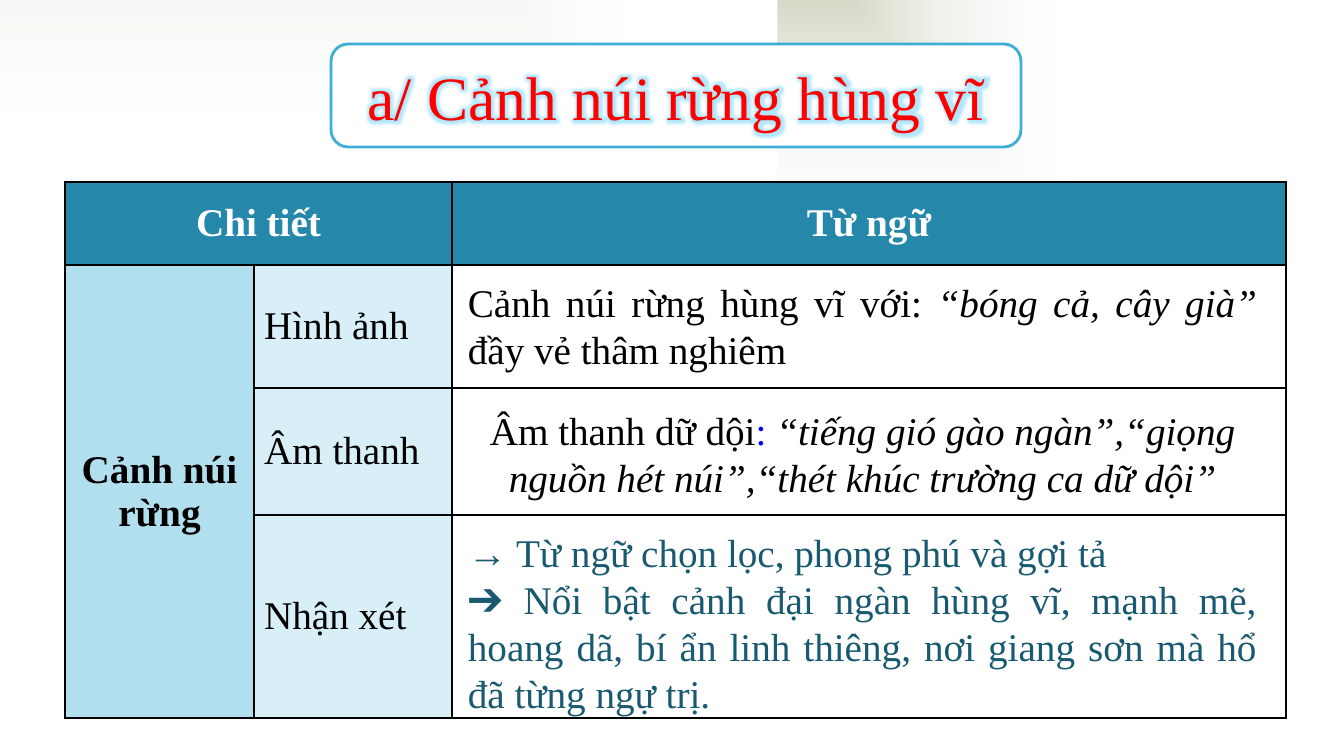
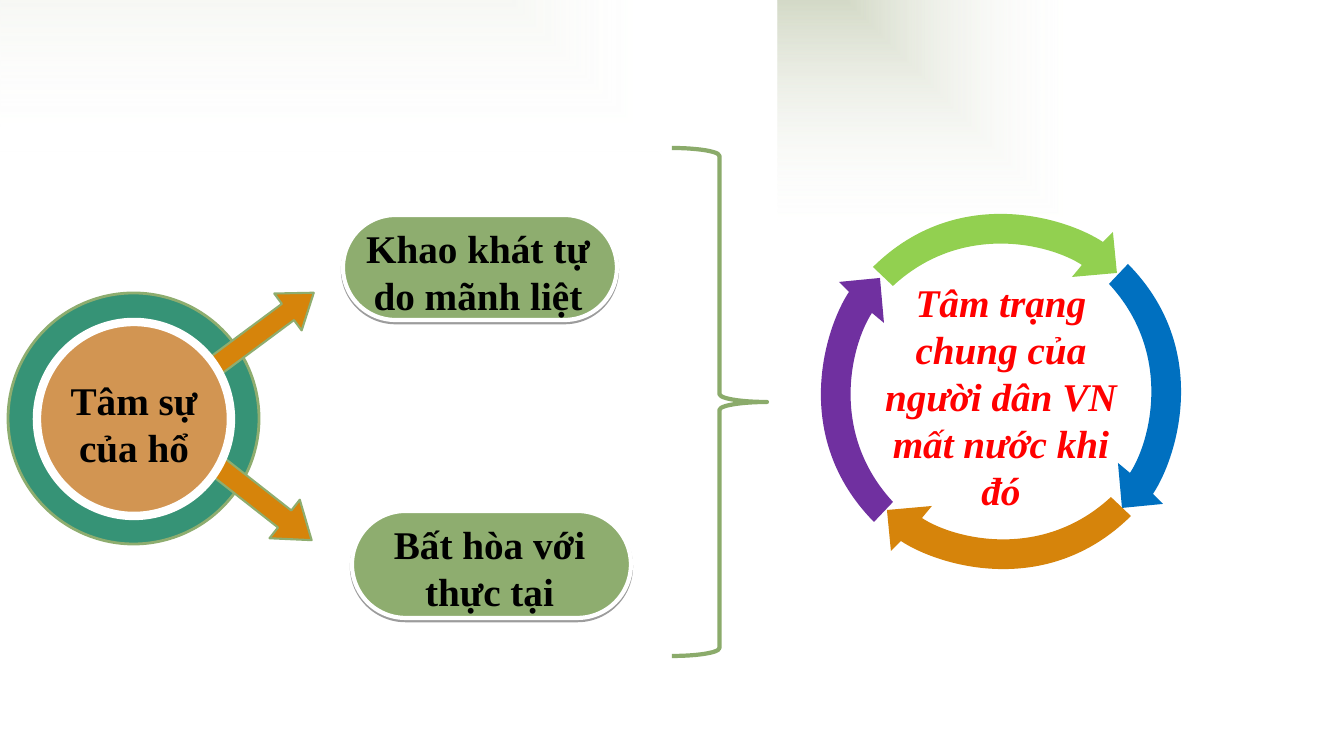
from collections import namedtuple
from lxml.etree import SubElement
from pptx import Presentation
from pptx.dml.color import RGBColor
from pptx.enum.shapes import MSO_SHAPE
from pptx.enum.text import MSO_ANCHOR, MSO_AUTO_SIZE, PP_ALIGN
from pptx.oxml import parse_xml
from pptx.oxml.ns import nsdecls, qn
from pptx.util import Pt

EMU_PER_PX = 914400 / 100.8
FONT = "Times New Roman"
COLORS = {
    "white": "FFFFFF", "black": "000000", "red": "FF0000", "blue_text": "0000FF",
    "mist": "CBD2BC", "frame": "3FAED5", "glow": "3FC4F5",
    "header": "2587AA", "group": "B2DFEE", "label": "D9EFF7", "remark": "195A71",
    "teal": "369376", "sage": "8EAD6F", "brace": "8BAB6B", "tan": "D29552",
    "orange": "D6840B", "green": "92D050", "blue": "0070C0", "purple": "7030A0",
}
Box = namedtuple("Box", "left top width height")


def px(length):
    return round(length * EMU_PER_PX)


def rgb(name):
    return RGBColor.from_string(COLORS[name])


def inside(box, left, top, width, height):
    """Box measured from the top left corner of another box."""
    return Box(box.left + left, box.top + top, width, height)


# Shared text and shape styling
def add_span(para, text, size=28, color="black", bold=False, italic=False):
    span = para.add_run()
    span.text = text
    font = span.font
    font.name, font.size, font.bold, font.italic = FONT, Pt(size), bold, italic
    font.color.rgb = rgb(color)
    return span


def write(frame, text, align=PP_ALIGN.CENTER, anchor=MSO_ANCHOR.TOP, **style):
    """Write one paragraph; text is a string or a list of (text, style) spans."""
    para = frame.paragraphs[0]
    if para.runs:
        para = frame.add_paragraph()
    para.alignment = align
    frame.vertical_anchor = anchor
    spans = [(text, {})] if isinstance(text, str) else text
    for words, extra in spans:
        add_span(para, words, **{**style, **extra})


def add_label(page, box, *texts, **style):
    label = page.shapes.add_textbox(*map(px, box))
    frame = label.text_frame
    frame.word_wrap = True
    frame.auto_size = MSO_AUTO_SIZE.SHAPE_TO_FIT_TEXT
    for text in texts:
        write(frame, text, **style)


def paint(shape, fill=None, line=None, width=1):
    if fill:
        shape.fill.solid()
        shape.fill.fore_color.rgb = rgb(fill)
    else:
        shape.fill.background()
    if line:
        shape.line.color.rgb = rgb(line)
        shape.line.width = Pt(width)
    else:
        shape.line.fill.background()


def add_figure(page, kind, box, fill=None, line=None, width=1, adjust=(), turn=0):
    shape = page.shapes.add_shape(kind, *map(px, box))
    shape.shadow.inherit = False
    paint(shape, fill, line, width)
    for index, value in enumerate(adjust):
        shape.adjustments[index] = value
    shape.rotation = turn
    return shape


# Backdrop on the slide master
def add_backdrop(deck, page):
    patches = [(Box(0, 0, 986, 647), 70000, False),
               (Box(778, 0, 566, 521), 100000, True)]
    for number, (box, alpha, flipped) in enumerate(patches):
        shape = add_figure(page, MSO_SHAPE.RECTANGLE, box)
        gradient = parse_xml(
            f'<a:gradFill {nsdecls("a")} rotWithShape="1"><a:gsLst>'
            f'<a:gs pos="0"><a:srgbClr val="{COLORS["mist"]}"><a:alpha val="{alpha}"/></a:srgbClr></a:gs>'
            f'<a:gs pos="100000"><a:srgbClr val="{COLORS["white"]}"><a:alpha val="0"/></a:srgbClr></a:gs>'
            '</a:gsLst><a:path path="rect"><a:fillToRect r="100000" b="100000"/></a:path></a:gradFill>')
        properties = shape.element.spPr
        properties.replace(properties.find(qn("a:noFill")), gradient)
        if flipped:
            properties.find(qn("a:xfrm")).set("flipH", "1")
        shape.element.nvSpPr.cNvPr.set("id", str(100 + number))
        deck.slide_master.shapes.element.insert(2, shape.element)


# Slide 1: title and table
def add_title(page, box, text):
    title = page.shapes.title
    title.left, title.top, title.width, title.height = map(px, box)
    border = add_figure(page, MSO_SHAPE.ROUNDED_RECTANGLE, box, "white", "frame", 2)
    title.element.addprevious(border.element)
    frame = title.text_frame
    frame.word_wrap = True
    frame.auto_size = MSO_AUTO_SIZE.NONE
    write(frame, text, anchor=MSO_ANCHOR.MIDDLE, size=44, color="red")
    span = frame.paragraphs[0].runs[0]
    span.font.fill._xPr.find(qn("a:solidFill")).addnext(parse_xml(
        f'<a:effectLst {nsdecls("a")}><a:glow rad="101600"><a:srgbClr val="{COLORS["glow"]}">'
        '<a:alpha val="40000"/></a:srgbClr></a:glow></a:effectLst>'))


def style_cell(cell, fill):
    cell.fill.solid()
    cell.fill.fore_color.rgb = rgb(fill)
    cell.vertical_anchor = MSO_ANCHOR.MIDDLE
    properties = cell._tc.get_or_add_tcPr()
    for index, side in enumerate(("lnL", "lnR", "lnT", "lnB")):
        border = parse_xml(f'<a:{side} {nsdecls("a")} w="12700"><a:solidFill>'
                           f'<a:srgbClr val="{COLORS["black"]}"/></a:solidFill></a:{side}>')
        properties.insert(index, border)


def add_details(page, box):
    columns, rows = (189, 198, 834), (83, 123, 127, 203)
    table = page.shapes.add_table(len(rows), len(columns), *map(px, box)).table
    table.first_row = table.horz_banding = False
    for column, width in zip(table.columns, columns):
        column.width = px(width)
    for row, height in zip(table.rows, rows):
        row.height = px(height)
    for row_index in range(len(rows)):
        for column_index, body_fill in enumerate(("group", "label", "white")):
            style_cell(table.cell(row_index, column_index), body_fill if row_index else "header")
    table.cell(0, 0).merge(table.cell(0, 1))
    table.cell(1, 0).merge(table.cell(3, 0))

    heading = dict(bold=True, anchor=MSO_ANCHOR.MIDDLE)
    write(table.cell(0, 0).text_frame, "Chi tiết", color="white", **heading)
    write(table.cell(0, 2).text_frame, "Từ ngữ", color="white", **heading)
    write(table.cell(1, 0).text_frame, "Cảnh núi rừng", **heading)
    for row_index, name in enumerate(("Hình ảnh", "Âm thanh", "Nhận xét"), 1):
        write(table.cell(row_index, 1).text_frame, name,
              align=PP_ALIGN.LEFT, anchor=MSO_ANCHOR.MIDDLE)

    # Wording laid over the last column
    italic = dict(italic=True)
    add_label(page, inside(box, 393, 91, 809, 105),
              [("Cảnh núi rừng hùng vĩ với: ", {}), ("“bóng cả, cây già” ", italic),
               ("đầy vẻ thâm nghiêm", {})],
              align=PP_ALIGN.JUSTIFY, anchor=MSO_ANCHOR.MIDDLE)
    add_label(page, inside(box, 393, 219, 809, 105),
              [("Âm thanh dữ dội", {}), (": ", dict(color="blue_text")),
               ("“tiếng gió gào ngàn”,“giọng nguồn hét núi”,“thét khúc trường ca dữ dội”", italic)],
              anchor=MSO_ANCHOR.MIDDLE)
    add_label(page, inside(box, 393, 341, 809, 200),
              "→ Từ ngữ chọn lọc, phong phú và gợi tả",
              "➔ Nổi bật cảnh đại ngàn hùng vĩ, mạnh mẽ, hoang dã, bí ẩn linh thiêng, "
              "nơi giang sơn mà hổ đã từng ngự trị.",
              align=PP_ALIGN.JUSTIFY, color="remark")


# Slide 2: core, pills, brace and cycle
def add_core(page, box, text):
    add_figure(page, MSO_SHAPE.OVAL, box, "teal", "sage", 2)
    for arrow, turn in ((inside(box, 41, 132, 294, 49), 38.1),
                        (inside(box, 48, 62, 286, 46), 323.4)):
        add_figure(page, MSO_SHAPE.LEFT_RIGHT_ARROW, arrow, "orange", "sage", 1.5,
                   adjust=(0.44, 0.7), turn=turn)
    add_figure(page, MSO_SHAPE.OVAL, inside(box, 29, 29, 194, 194), "tan", "white", 6)
    add_label(page, inside(box, 41, 78, 170, 105), text, bold=True)


def add_pill(page, box, text):
    pill = add_figure(page, MSO_SHAPE.ROUNDED_RECTANGLE, box, "sage", "white", 3, adjust=(0.5,))
    effects = pill.element.spPr.find(qn("a:effectLst"))
    shadow = SubElement(effects, qn("a:outerShdw"), dist="20000", dir="5400000", rotWithShape="0")
    color = SubElement(shadow, qn("a:srgbClr"), val=COLORS["black"])
    SubElement(color, qn("a:alpha"), val="38000")
    add_label(page, inside(box, (box.width - 247) / 2 - 2, 4, 247, 105), text, bold=True)


def bend(shape, first):
    """Turn three straight segments, from the one numbered first, into one curve."""
    segments = list(shape.element.iter(qn("a:lnTo")))[first:first + 3]
    curve = parse_xml(f'<a:cubicBezTo {nsdecls("a")}/>')
    segments[0].addprevious(curve)
    for segment in segments:
        curve.append(segment[0])
        segment.getparent().remove(segment)


def add_cycle(page, box, text):
    add_label(page, inside(box, 48, 61, 264, 248), text, color="red", bold=True, italic=True)
    center_x, center_y = box.left + box.width / 2, box.top + box.height / 2
    # Top arrow around the centre; each next one is a quarter turn on
    outline = [(-109, -106), (-129, -125), (-44, -209), (65, -174), (101, -150),
               (111, -160), (115, -119), (70, -115), (80, -127),
               (48, -148), (-40, -170), (-109, -106)]
    nudges = {"green": (1, 0), "blue": (2, 1), "orange": (1, -1), "purple": (-2, 1)}
    for color, (shift_x, shift_y) in nudges.items():
        points = [(px(center_x + shift_x + x), px(center_y + shift_y + y)) for x, y in outline]
        builder = page.shapes.build_freeform(*points[0])
        builder.add_line_segments(points[1:], close=True)
        arrow = builder.convert_to_shape()
        bend(arrow, 8)
        bend(arrow, 1)
        arrow.shadow.inherit = False
        paint(arrow, color)
        outline = [(-y, x) for x, y in outline]


def build_details_slide(page):
    add_title(page, Box(331, 44, 690, 103), "a/ Cảnh núi rừng hùng vĩ")
    add_details(page, Box(65, 182, 1221, 536))


def build_feelings_slide(page):
    add_core(page, Box(8, 293, 251, 251), "Tâm sự của hổ")
    add_pill(page, Box(352, 511, 279, 107), "Bất hòa với thực tại")
    add_pill(page, Box(343, 215, 274, 105), "Khao khát tự do mãnh liệt")
    add_figure(page, MSO_SHAPE.RIGHT_BRACE, Box(672, 148, 95, 508), None, "brace", 3)
    add_cycle(page, Box(821, 212, 360, 360), "Tâm trạng chung của người dân VN mất nước khi đó")


def main():
    deck = Presentation()
    deck.slide_width, deck.slide_height = px(1344), px(756)
    title_only, blank = deck.slide_layouts[5], deck.slide_layouts[6]
    details = deck.slides.add_slide(title_only)
    add_backdrop(deck, details)
    build_details_slide(details)
    build_feelings_slide(deck.slides.add_slide(blank))
    deck.save("out.pptx")


if __name__ == "__main__":
    main()
